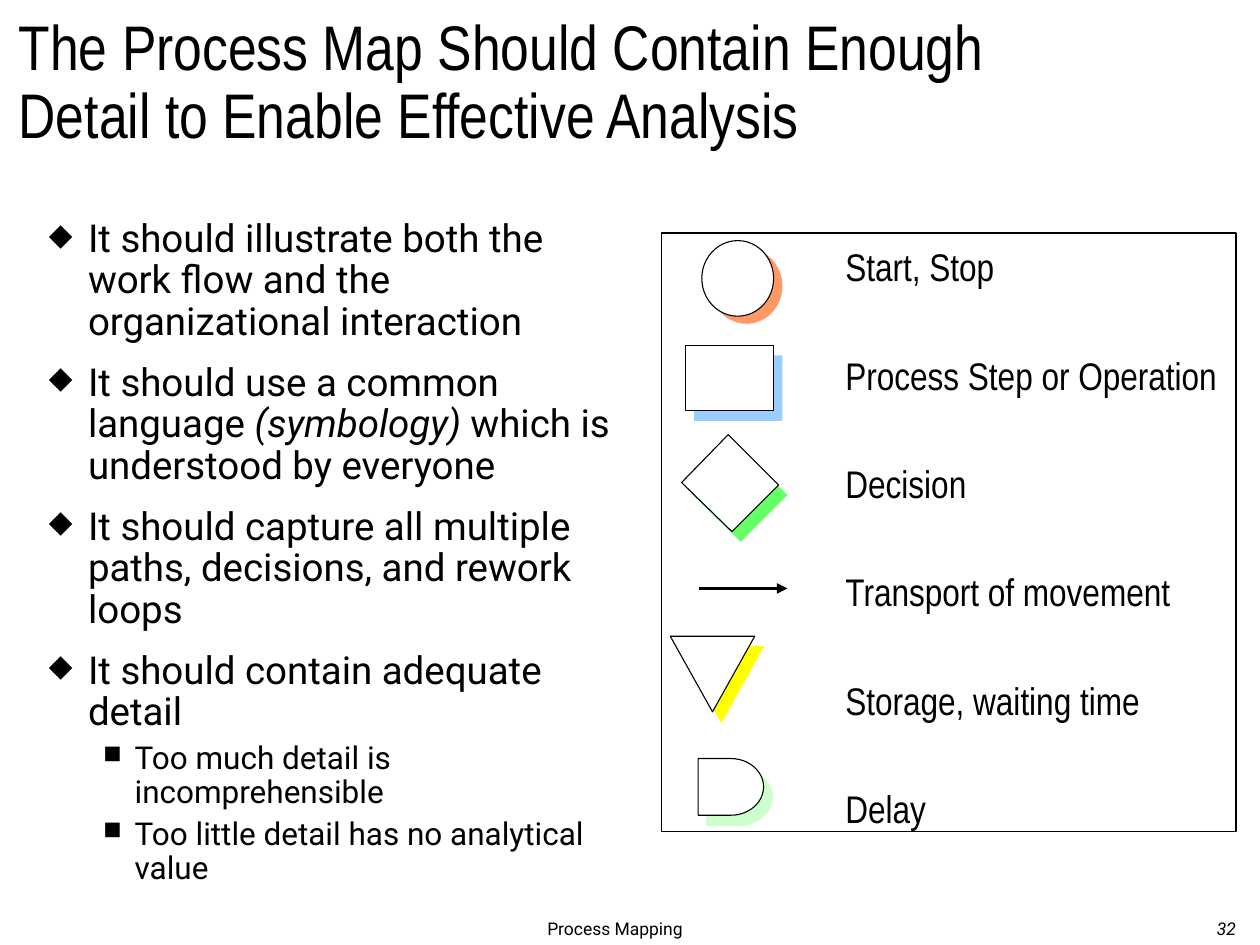
from dataclasses import dataclass
from typing import Optional

import pptx
import pptx.dml.color
import pptx.enum.shapes
import pptx.enum.text
import pptx.oxml
import pptx.oxml.ns
import pptx.util

Inches = pptx.util.Inches
Pt = pptx.util.Pt
RGBColor = pptx.dml.color.RGBColor
Preset = pptx.enum.shapes.MSO_SHAPE
Anchor = pptx.enum.text.MSO_ANCHOR
AutoSize = pptx.enum.text.MSO_AUTO_SIZE

BLACK = RGBColor(0x00, 0x00, 0x00)
WHITE = RGBColor(0xFF, 0xFF, 0xFF)
ORANGE = RGBColor(0xFF, 0x99, 0x66)
BLUE = RGBColor(0x99, 0xCC, 0xFF)
GREEN = RGBColor(0x66, 0xFF, 0x66)
YELLOW = RGBColor(0xFF, 0xFF, 0x00)
PALE_GREEN = RGBColor(0xCC, 0xFF, 0xCC)

TITLE_FONT = {"name": "Arial Narrow", "size": Pt(36)}
LABEL_FONT = {"name": "Arial Narrow", "size": Pt(22)}
FOOTER_FONT = {"name": "Roboto", "size": Pt(10)}
NUMBER_FONT = {**FOOTER_FONT, "italic": True}
HAIRLINE = 0.63
LABEL_LEFT, LABEL_TOP, LABEL_STEP = 6.71, 1.93, 0.86


@dataclass
class Symbol:
    preset: Optional[Preset]
    left: float
    top: float
    width: float
    height: float
    shade: RGBColor
    shift_x: float = 0.07
    shift_y: float = 0.08
    outlined_shade: bool = False


@dataclass
class BulletLevel:
    character: str
    margin: float
    indent: float
    size: int
    space: float


MAIN = BulletLevel("◆", 0.31, -0.31, 22, 11)
SUB = BulletLevel("■", 0.68, -0.25, 18, 4.5)

BULLETS = [
    (MAIN, ["It should illustrate both the work flow and the organizational interaction"]),
    (MAIN, ["It should use a common language ", "(symbology) ", "which is understood by everyone"]),
    (MAIN, ["It should capture all multiple paths, decisions, and rework loops"]),
    (MAIN, ["It should contain adequate detail"]),
    (SUB, ["Too much detail is incomprehensible"]),
    (SUB, ["Too little detail has no analytical value"]),
]

SYMBOLS = [
    Symbol(Preset.OVAL, 5.57, 1.91, 0.57, 0.6, ORANGE, 0.07, 0.06),
    Symbol(Preset.RECTANGLE, 5.44, 2.74, 0.7, 0.52, BLUE),
    Symbol(None, 5.41, 3.45, 0.77, 0.77, GREEN),
    Symbol(Preset.FLOWCHART_MERGE, 5.32, 5.05, 0.67, 0.6, YELLOW, outlined_shade=True),
    Symbol(Preset.FLOWCHART_DELAY, 5.54, 6.02, 0.52, 0.45, PALE_GREEN, outlined_shade=True),
]

LABELS = [
    ("Start, Stop", 1.3),
    ("Process Step or Operation", 3.08),
    ("Decision", 1.08),
    ("Transport of movement", 2.72),
    ("Storage, waiting time", 2.47),
    ("Delay", 0.76),
]


def apply(target, values: dict) -> None:
    for name, value in values.items():
        setattr(target, name, value)


def add_span(para, text: str, font: dict) -> None:
    span = para.add_run()
    span.text = text
    apply(span.font, font)
    span.font.color.rgb = BLACK


def add_box(page, left: float, top: float, width: float, height: float, frame: dict):
    box = page.shapes.add_textbox(Inches(left), Inches(top), Inches(width), Inches(height))
    apply(box.text_frame, {"word_wrap": True, **frame})
    return box.text_frame


def add_bullet(para, level: BulletLevel) -> None:
    properties = para._p.get_or_add_pPr()
    properties.set("marL", str(Inches(level.margin)))
    properties.set("indent", str(Inches(level.indent)))
    namespace = pptx.oxml.ns.nsdecls("a")
    for markup in (
        f'<a:buClr {namespace}><a:srgbClr val="{BLACK}"/></a:buClr>',
        f'<a:buSzPct {namespace} val="80000"/>',
        f'<a:buChar {namespace} char="{level.character}"/>',
    ):
        properties.append(pptx.oxml.parse_xml(markup))


def add_bullets(page) -> None:
    frame = add_box(page, 0.29, 1.69, 4.68, 4.71, {})
    for index, (level, parts) in enumerate(BULLETS):
        para = frame.add_paragraph() if index else frame.paragraphs[0]
        apply(para, {
            "level": int(level is SUB),
            "line_spacing": 0.9,
            "space_before": Pt(level.space if index else 0),
        })
        add_bullet(para, level)
        for position, part in enumerate(parts):
            font = {"name": "Roboto", "size": Pt(level.size), "italic": position == 1}
            add_span(para, part, font)


def paint(shape, fill: RGBColor, line: Optional[RGBColor], weight: float) -> None:
    shape.shadow.inherit = False
    shape.fill.solid()
    shape.fill.fore_color.rgb = fill
    if line is None:
        shape.line.fill.background()
    else:
        shape.line.color.rgb = line
        shape.line.width = Pt(weight)


def add_outline(page, symbol: Symbol, left: float, top: float):
    if symbol.preset is not None:
        return page.shapes.add_shape(
            symbol.preset, Inches(left), Inches(top), Inches(symbol.width), Inches(symbol.height))
    corners = [(0.37, 0), (0, 0.38), (0.4, 0.77), (0.77, 0.4)]
    points = [(Inches(left + x), Inches(top + y)) for x, y in corners]
    builder = page.shapes.build_freeform(*points[0])
    builder.add_line_segments(points[1:], close=True)
    return builder.convert_to_shape()


def add_symbol(page, symbol: Symbol) -> None:
    shade = add_outline(page, symbol, symbol.left + symbol.shift_x, symbol.top + symbol.shift_y)
    paint(shade, symbol.shade, symbol.shade if symbol.outlined_shade else None, HAIRLINE)
    paint(add_outline(page, symbol, symbol.left, symbol.top), WHITE, BLACK, HAIRLINE)


def add_arrow(page) -> None:
    arrow = page.shapes.add_connector(
        pptx.enum.shapes.MSO_CONNECTOR.STRAIGHT,
        Inches(5.55), Inches(4.67), Inches(6.25), Inches(4.67))
    arrow.line.color.rgb = BLACK
    arrow.line.width = Pt(2)
    namespace = pptx.oxml.ns.nsdecls("a")
    arrow.line._get_or_add_ln().append(
        pptx.oxml.parse_xml(f'<a:tailEnd {namespace} type="triangle"/>'))
    arrow._element.spPr.append(pptx.oxml.parse_xml(f"<a:effectLst {namespace}/>"))


def add_legend(page) -> None:
    panel = page.shapes.add_shape(
        Preset.RECTANGLE, Inches(5.25), Inches(1.85), Inches(4.56), Inches(4.75))
    paint(panel, WHITE, BLACK, 1)
    for symbol in SYMBOLS:
        add_symbol(page, symbol)
    margins = dict.fromkeys(("margin_left", "margin_top", "margin_right", "margin_bottom"), 0)
    label_frame = {**margins, "word_wrap": False, "auto_size": AutoSize.SHAPE_TO_FIT_TEXT}
    for row, (text, width) in enumerate(LABELS):
        frame = add_box(page, LABEL_LEFT, LABEL_TOP + row * LABEL_STEP, width, 0.41, label_frame)
        add_span(frame.paragraphs[0], text, LABEL_FONT)
    add_arrow(page)


def main() -> None:
    deck = pptx.Presentation()
    apply(deck, {"slide_width": Inches(10), "slide_height": Inches(7.5)})
    page = deck.slides.add_slide(deck.slide_layouts[6])

    bottom = {"vertical_anchor": Anchor.BOTTOM}
    number = add_box(page, 9.56, 7.25, 0.44, 0.25, bottom).paragraphs[0]
    add_span(number, "32", NUMBER_FONT)
    footer = add_box(page, 1.42, 7.24, 6.92, 0.26, {}).paragraphs[0]
    footer.alignment = pptx.enum.text.PP_ALIGN.CENTER
    add_span(footer, "Process Mapping", FOOTER_FONT)
    title = add_box(page, 0.05, 0.01, 8.31, 1.25, bottom).paragraphs[0]
    title.line_spacing = 0.9
    add_span(title, "The Process Map Should Contain Enough Detail to Enable Effective Analysis", TITLE_FONT)

    add_bullets(page)
    add_legend(page)
    deck.save("out.pptx")


if __name__ == "__main__":
    main()
